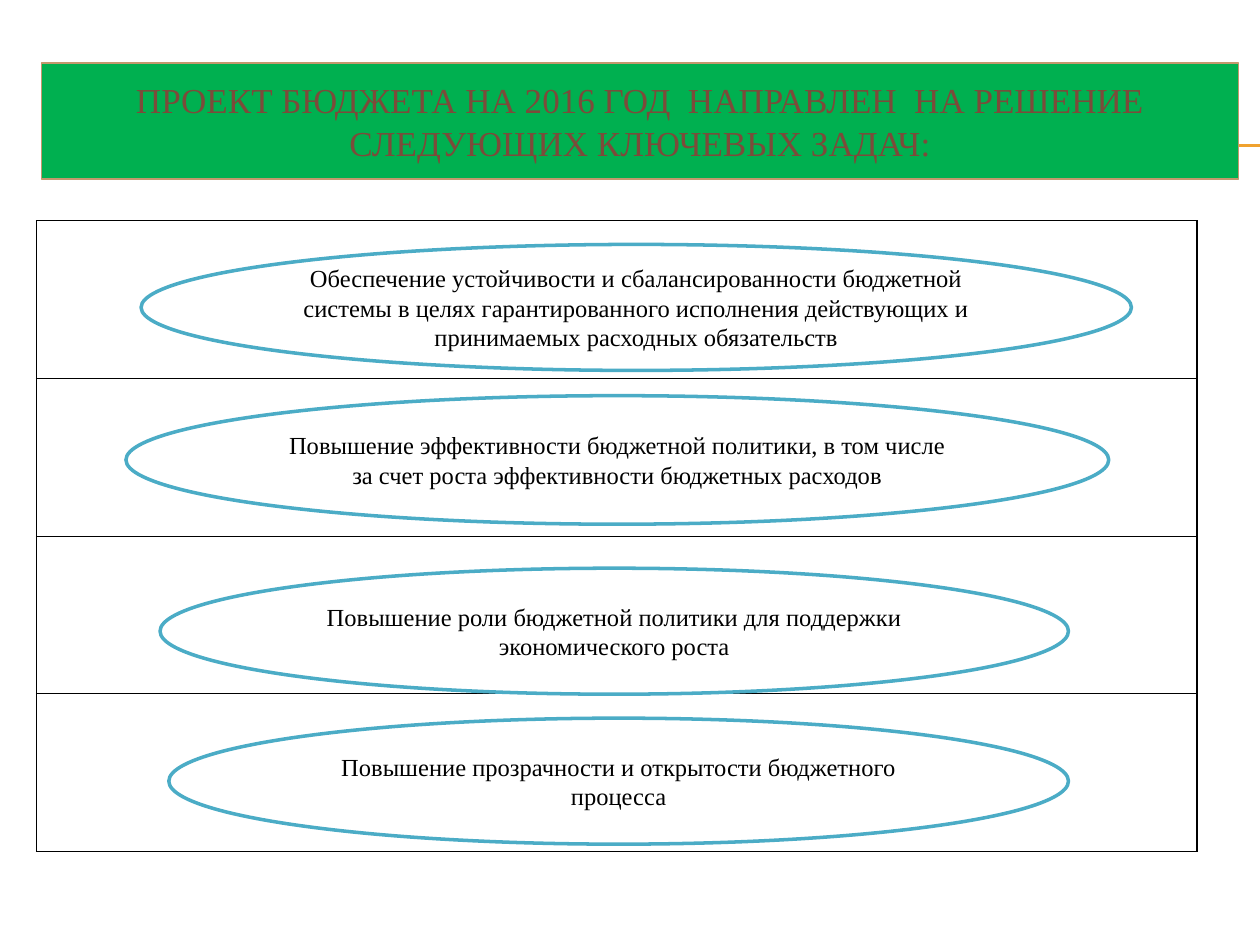
from dataclasses import dataclass
from lxml.etree import SubElement
from pptx import Presentation
from pptx.dml.color import RGBColor
from pptx.enum.shapes import MSO_CONNECTOR, MSO_SHAPE
from pptx.enum.text import MSO_ANCHOR, PP_ALIGN
from pptx.oxml.ns import qn
from pptx.util import Inches, Pt


@dataclass(frozen=True)
class Theme:
    font: str = "Times New Roman"
    head: int = 20
    body: int = 14
    green: str = "00B050"
    tan: str = "C3986D"
    brown: str = "7C4B3A"
    gold: str = "F0A22E"
    teal: str = "4BACC6"
    white: str = "FFFFFF"
    black: str = "000000"


@dataclass(frozen=True)
class Box:
    """A place on the grid, in columns and rows."""
    left: float
    top: float
    width: float
    height: float


@dataclass(frozen=True)
class Style:
    kind: MSO_SHAPE
    fill: str
    line: str
    weight: float
    ink: str
    size: int


@dataclass(frozen=True)
class Goal:
    box: Box
    text: str


THEME = Theme()
WIDE, HIGH = Inches(10), Inches(7.5)
COL, ROW = WIDE / 10, HIGH / 7.5

BANNER = Style(MSO_SHAPE.RECTANGLE, THEME.green, THEME.tan, 0.79, THEME.brown, THEME.head)
OVAL = Style(MSO_SHAPE.OVAL, THEME.white, THEME.teal, 2, THEME.black, THEME.body)
TITLE = "ПРОЕКТ БЮДЖЕТА НА 2016 ГОД  НАПРАВЛЕН  НА РЕШЕНИЕ СЛЕДУЮЩИХ КЛЮЧЕВЫХ ЗАДАЧ:"
GOALS = (
    Goal(Box(1.12, 1.94, 7.86, 1),
         "Обеспечение устойчивости и сбалансированности бюджетной системы в целях "
         "гарантированного исполнения действующих и принимаемых расходных обязательств"),
    Goal(Box(1, 3.14, 7.8, 1.02),
         "Повышение эффективности бюджетной политики, в том числе "
         "за счет роста эффективности бюджетных расходов"),
    Goal(Box(1.27, 4.51, 7.21, 1),
         "Повышение роли бюджетной политики для поддержки экономического роста"),
    Goal(Box(1.34, 5.7, 7.14, 1),
         "Повышение прозрачности и открытости бюджетного процесса"),
)


def place(box: Box) -> tuple[int, ...]:
    return (round(box.left * COL), round(box.top * ROW),
            round(box.width * COL), round(box.height * ROW))


def color(code: str) -> RGBColor:
    return RGBColor.from_string(code)


def draw_rule(slide, left: float, top: float) -> None:
    """Draw a thin line out to the right edge of the slide."""
    y = round(top * ROW)
    rule = slide.shapes.add_connector(MSO_CONNECTOR.STRAIGHT, round(left * COL), y, WIDE, y)
    rule.line.color.rgb = color(THEME.gold)
    rule.line.width = Pt(0.75)
    SubElement(rule._element.spPr, qn("a:effectLst"))


def draw_shape(slide, box: Box, style: Style, text: str) -> None:
    shape = slide.shapes.add_shape(style.kind, *place(box))
    shape.shadow.inherit = False
    shape.fill.solid()
    shape.fill.fore_color.rgb = color(style.fill)
    shape.line.color.rgb = color(style.line)
    shape.line.width = Pt(style.weight)
    frame = shape.text_frame
    frame.word_wrap = True
    frame.vertical_anchor = MSO_ANCHOR.MIDDLE
    para = frame.paragraphs[0]
    para.alignment = PP_ALIGN.CENTER
    run = para.add_run()
    run.text = text
    run.font.name = THEME.font
    run.font.size = Pt(style.size)
    run.font.color.rgb = color(style.ink)


def draw_border(cell, side: str, weight: float) -> None:
    edge = SubElement(cell._tc.get_or_add_tcPr(), qn(f"a:{side}"), w=str(Pt(weight)))
    fill = SubElement(edge, qn("a:solidFill"))
    SubElement(fill, qn("a:srgbClr"), val=THEME.black)


def draw_table(slide, box: Box, count: int) -> None:
    table = slide.shapes.add_table(count, 1, *place(box)).table
    table.first_row = table.horz_banding = False
    for cell in table.iter_cells():
        for side, weight in (("lnL", 1), ("lnR", 1), ("lnT", 0.5), ("lnB", 0.5)):
            draw_border(cell, side, weight)
        cell.fill.background()


def main() -> None:
    deck = Presentation()
    deck.slide_width, deck.slide_height = WIDE, HIGH
    slide = deck.slides.add_slide(deck.slide_layouts[6])

    # Double rule behind the banner
    for top in (1.15, 1.16):
        draw_rule(slide, 0.56, top)

    # Banner
    draw_shape(slide, Box(0.33, 0.5, 9.5, 0.92), BANNER, TITLE)

    # Table with one goal in each row
    draw_table(slide, Box(0.29, 1.75, 9.21, 5.01), len(GOALS))
    for goal in GOALS:
        draw_shape(slide, goal.box, OVAL, goal.text)

    deck.save("out.pptx")


if __name__ == "__main__":
    main()
